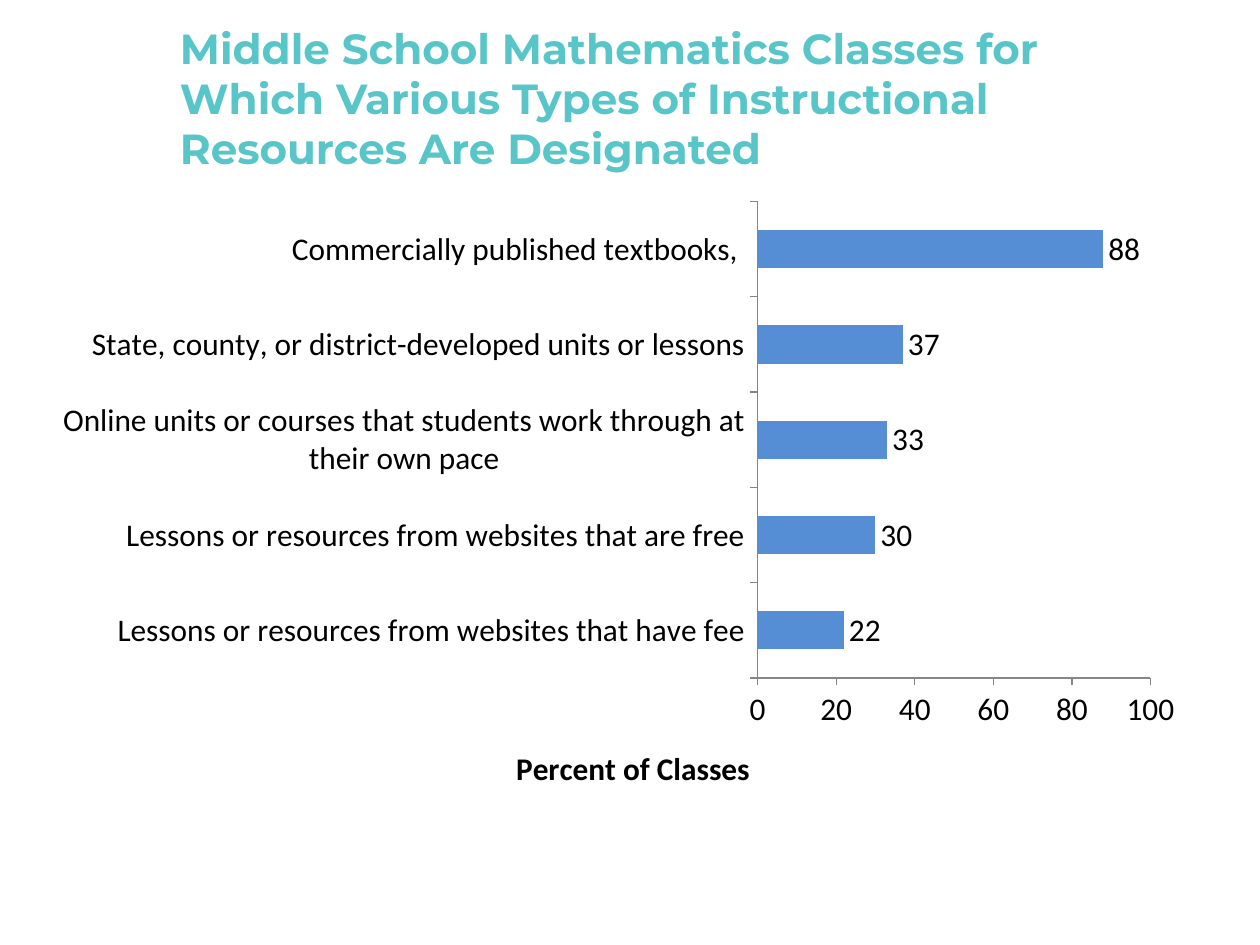
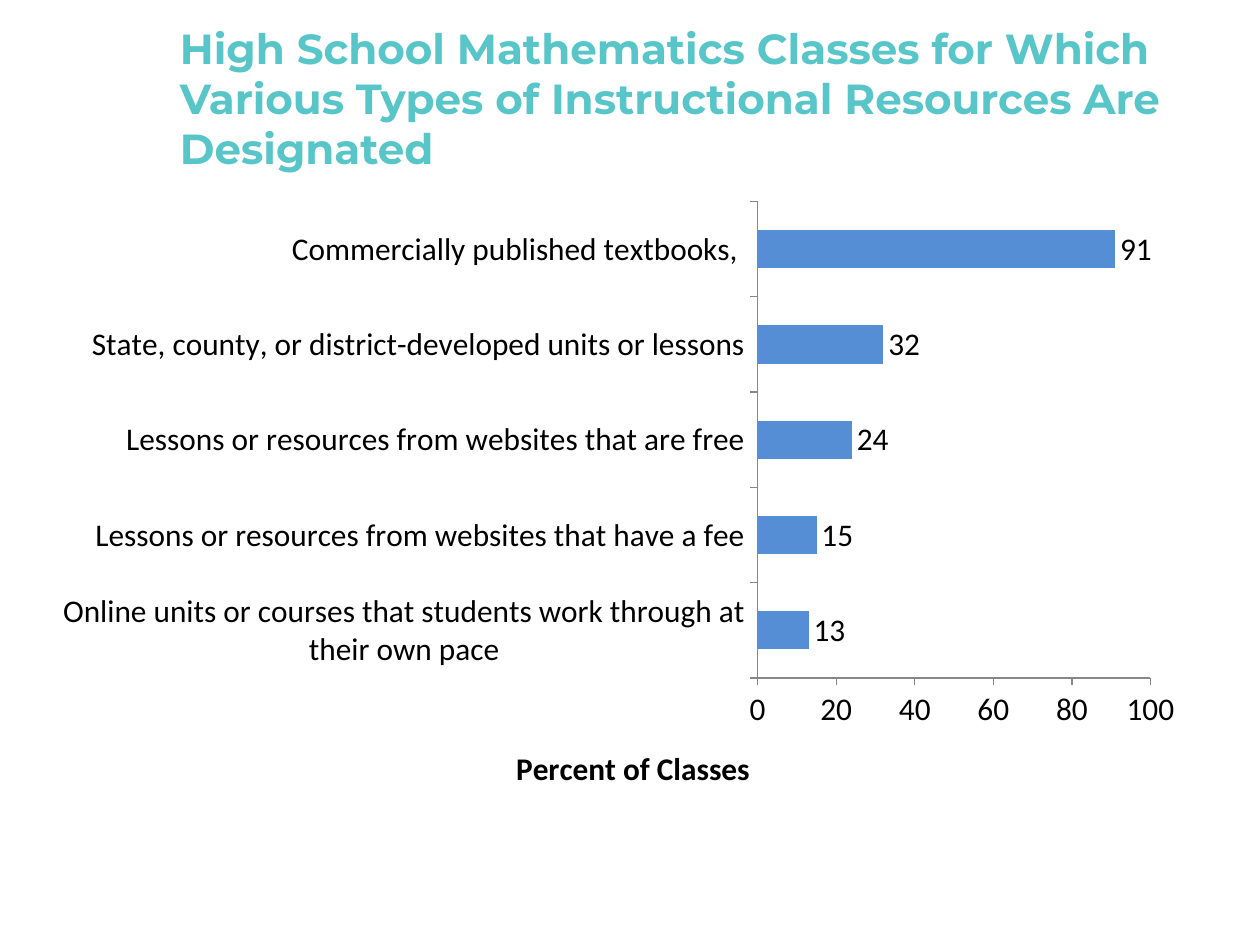
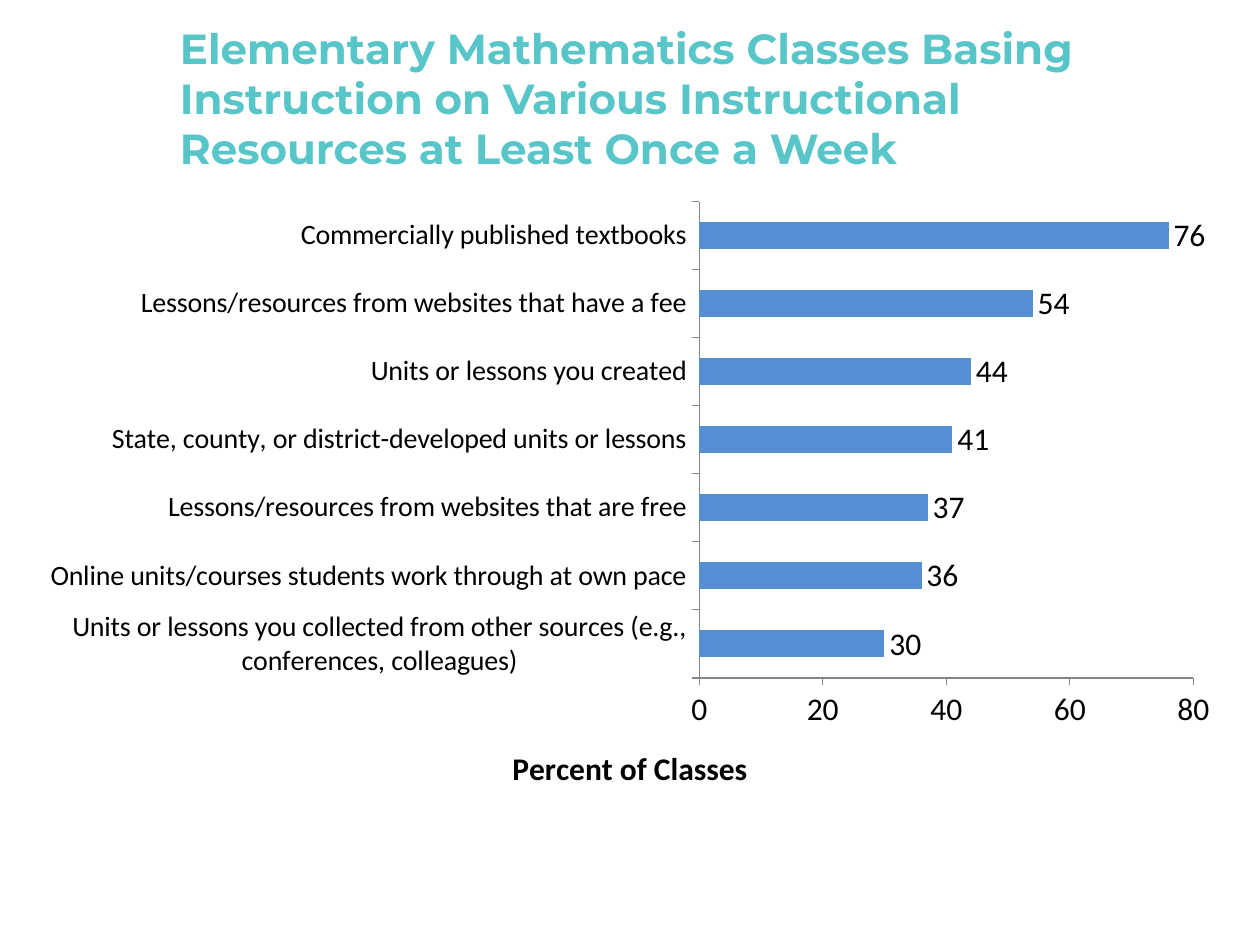
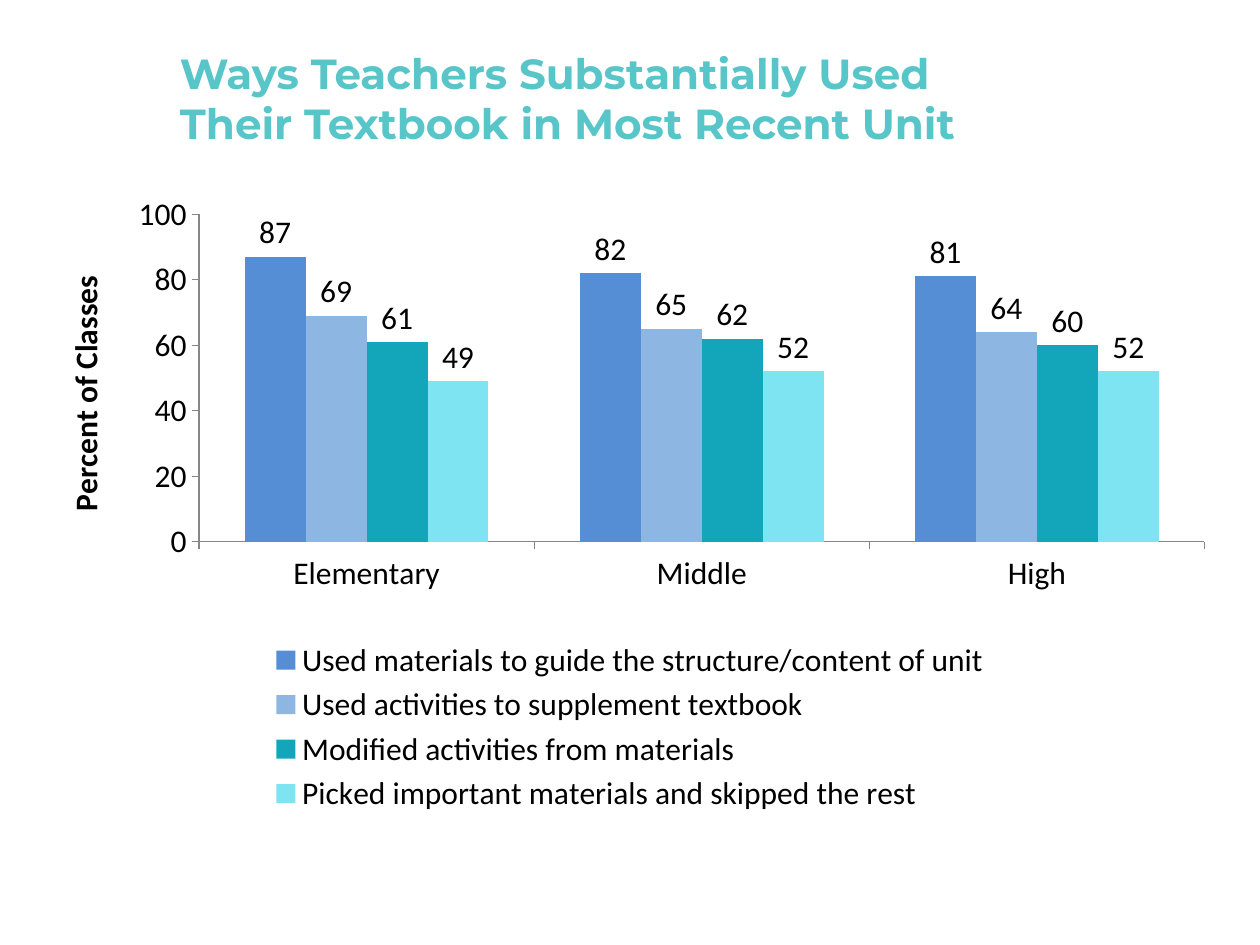
import dataclasses

import pptx
import pptx.chart.data
import pptx.dml.color
import pptx.enum.chart
import pptx.enum.text
import pptx.oxml
import pptx.util

Inches = pptx.util.Inches
Pt = pptx.util.Pt
Rgb = pptx.dml.color.RGBColor.from_string
Chart = pptx.enum.chart
Kind = Chart.XL_CHART_TYPE

WAYS = {
    "Used materials to guide the structure/content of unit": (87, 82, 81),
    "Used activities to supplement textbook": (69, 65, 64),
    "Modified activities from materials": (61, 62, 60),
    "Picked important materials and skipped the rest": (49, 52, 52),
}
TEXTBOOK = "Commercially published textbooks, "
STATE = "State, county, or district-developed units or lessons"
ONLINE = "Online units or courses that students work through at their own pace"
FREE = "Lessons or resources from websites that are free"


@dataclasses.dataclass(frozen=True)
class Theme:
    head: str = "Montserrat"
    body: str = "Calibri"
    teal: str = "58C5C9"
    ink: str = "000000"
    axis: str = "868686"
    fills: tuple = ("558ED5", "8EB6E3", "13A6BA", "7FE4F2")
    title: int = 24
    label: int = 18
    small: int = 16


def style(font, name, size, color, bold=False):
    font.name, font.size, font.bold = name, Pt(size), bold
    font.color.rgb = Rgb(color)


def write(frame, text, **look):
    """Put text in the frame's first paragraph and format its runs."""
    para = frame.paragraphs[0]
    para.text = text
    for run in para.runs:
        style(run.font, **look)


class Deck:
    def __init__(self, theme):
        self.theme = theme
        self.show = pptx.Presentation()
        self.show.slide_width, self.show.slide_height = Inches(10), Inches(7.5)
        self.slide = None

    def page(self, title):
        self.slide = self.show.slides.add_slide(self.show.slide_layouts[6])
        box = self.slide.shapes.add_textbox(
            Inches(1.33), Inches(0.3), Inches(8.17), Inches(0.95))
        frame = box.text_frame
        frame.word_wrap = True
        frame.vertical_anchor = pptx.enum.text.MSO_ANCHOR.MIDDLE
        look = self.theme
        write(frame, title, name=look.head, size=look.title,
              color=look.teal, bold=True)

    def chart(self, kind, cats, series, left, top_value):
        """Add a chart centred on the slide, with value labels."""
        data = pptx.chart.data.CategoryChartData()
        data.categories = cats
        for name, values in series.items():
            data.add_series(name, values)
        chart = self.slide.shapes.add_chart(
            kind, Inches(left), Inches(1.5), Inches(10 - 2 * left), Inches(5),
            data).chart
        look = self.theme
        style(chart.font, look.body, look.label, look.ink)
        chart.has_title = chart.has_legend = False
        plot = chart.plots[0]
        plot.gap_width = 150
        plot.vary_by_categories = False
        plot.has_data_labels = True
        plot.data_labels.show_value = True
        plot.data_labels.position = Chart.XL_LABEL_POSITION.OUTSIDE_END
        for bar, color in zip(plot.series, look.fills):
            bar.invert_if_negative = False
            bar.format.fill.solid()
            bar.format.fill.fore_color.rgb = Rgb(color)
        for axis in (chart.category_axis, chart.value_axis):
            axis.has_major_gridlines = False
            axis.major_tick_mark = Chart.XL_TICK_MARK.OUTSIDE
            axis.minor_tick_mark = Chart.XL_TICK_MARK.NONE
            axis.format.line.width = Pt(0.75)
            axis.format.line.color.rgb = Rgb(look.axis)
        self.scale(chart.value_axis, top_value, kind == Kind.COLUMN_CLUSTERED)
        return chart

    def scale(self, axis, top_value, upright):
        axis.minimum_scale, axis.maximum_scale = 0, top_value
        axis.major_unit = 20
        look = self.theme
        write(axis.axis_title.text_frame, "Percent of Classes", name=look.body,
              size=look.label, color=look.ink, bold=True)
        body = axis.axis_title._element.xpath(".//a:bodyPr")[0]
        body.set("rot", "-5400000" if upright else "0")
        body.set("vert", "horz")

    def bars(self, rows, left=0.5, top_value=100, size=None):
        """Add a one-series bar chart; rows run from top to bottom."""
        cats, values = zip(*reversed(rows))
        chart = self.chart(Kind.BAR_CLUSTERED, cats, {"Series 1": values},
                           left, top_value)
        style(chart.category_axis.tick_labels.font, self.theme.body,
              size or self.theme.label, self.theme.ink)

    def columns(self, cats, series, left, inner):
        """Add a column chart with a legend; inner is the plot's x, y, w, h."""
        chart = self.chart(Kind.COLUMN_CLUSTERED, cats, series, left, 100)
        chart.has_legend = True
        chart.legend.position = Chart.XL_LEGEND_POSITION.BOTTOM
        chart.legend.include_in_layout = False
        area = chart._chartSpace.xpath("c:chart/c:plotArea")[0]
        for old in area.xpath("c:layout"):
            area.remove(old)
        space = "http://schemas.openxmlformats.org/drawingml/2006/chart"
        parts = [("layoutTarget", "inner"), ("xMode", "edge"), ("yMode", "edge")]
        parts += zip("xywh", inner)
        tags = "".join(f'<c:{tag} val="{val}"/>' for tag, val in parts)
        area.insert(0, pptx.oxml.parse_xml(
            f'<c:layout xmlns:c="{space}"><c:manualLayout>{tags}'
            "</c:manualLayout></c:layout>"))


def main():
    deck = Deck(Theme())

    deck.page("Middle School Mathematics Classes for Which Various Types of "
              "Instructional Resources Are Designated")
    deck.bars([
        (TEXTBOOK, 88),
        (STATE, 37),
        (ONLINE, 33),
        (FREE, 30),
        ("Lessons or resources from websites that have fee", 22),
    ])

    deck.page("High School Mathematics Classes for Which Various Types of "
              "Instructional Resources Are Designated")
    deck.bars([
        (TEXTBOOK, 91),
        (STATE, 32),
        (FREE, 24),
        ("Lessons or resources from websites that have a fee", 15),
        (ONLINE, 13),
    ])

    deck.page("Elementary Mathematics Classes Basing Instruction on Various "
              "Instructional Resources at Least Once a Week")
    deck.bars([
        ("Commercially published textbooks", 76),
        ("Lessons/resources from websites that have a fee", 54),
        ("Units or lessons you created", 44),
        (STATE, 41),
        ("Lessons/resources from websites that are free", 37),
        ("Online units/courses students work through at own pace", 36),
        ("Units or lessons you collected from other sources "
         "(e.g., conferences, colleagues)", 30),
    ], left=0.21, top_value=80, size=deck.theme.small)

    deck.page("Ways Teachers Substantially Used\v"
              "Their Textbook in Most Recent Unit")
    deck.columns(("Elementary", "Middle", "High"), WAYS, left=0.25,
                 inner=(0.14, 0.04, 0.84, 0.52))

    deck.show.save("out.pptx")


if __name__ == "__main__":
    main()
